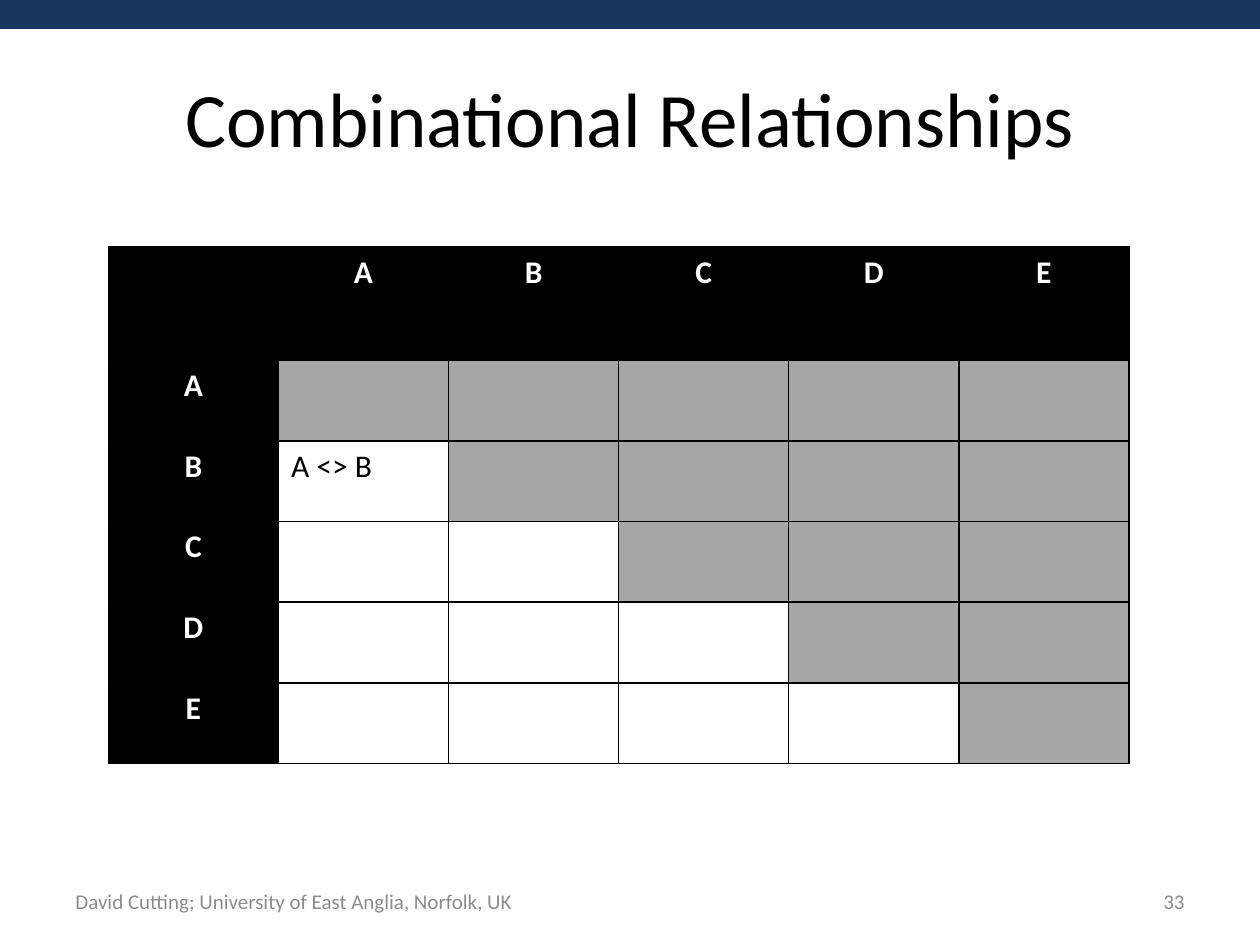
from lxml import etree
from pptx import Presentation
from pptx.dml.color import RGBColor
from pptx.enum import shapes, text
from pptx.oxml.ns import qn
from pptx.util import Inches, Pt

BLACK, WHITE, GREY, FOOTER_GREY = "000000", "FFFFFF", "A6A6A6", "8C8C8C"
LEFT, CENTER, RIGHT = text.PP_ALIGN.LEFT, text.PP_ALIGN.CENTER, text.PP_ALIGN.RIGHT


def write(frame, words, size=18, color=BLACK, bold=False, align=LEFT,
          anchor=text.MSO_ANCHOR.MIDDLE):
    frame.word_wrap = True
    frame.vertical_anchor = anchor
    paragraph = frame.paragraphs[0]
    paragraph.alignment = align
    run = paragraph.add_run()
    run.text = words
    run.font.name = "Calibri"
    run.font.size = Pt(size)
    run.font.bold = bold
    run.font.color.rgb = RGBColor.from_string(color)


def paint_cell(cell, color):
    """Give the cell black borders and a fill, or no fill if color is None."""
    properties = cell._tc.get_or_add_tcPr()
    for side in ("a:lnL", "a:lnR", "a:lnT", "a:lnB"):
        line = etree.SubElement(properties, qn(side), w=str(Pt(1)))
        fill = etree.SubElement(line, qn("a:solidFill"))
        etree.SubElement(fill, qn("a:srgbClr"), val=BLACK)
    if color:
        cell.fill.solid()
        cell.fill.fore_color.rgb = RGBColor.from_string(color)
    else:
        cell.fill.background()


presentation = Presentation()
presentation.slide_width, presentation.slide_height = Inches(10), Inches(7.5)
slide = presentation.slides.add_slide(presentation.slide_layouts[5])

# Top band
band = slide.shapes.add_shape(shapes.MSO_SHAPE.RECTANGLE, Inches(0), Inches(-0.01),
                              Inches(10), Inches(0.24))
band.shadow.inherit = False
band.fill.solid()
band.fill.fore_color.rgb = RGBColor.from_string("17375E")
band.line.fill.background()

# Title
title = slide.shapes.title
title.left, title.top = Inches(0.5), Inches(0.3)
title.width, title.height = Inches(9), Inches(1.25)
write(title.text_frame, "Combinational Relationships", size=44, align=CENTER)

# Relationship matrix: only the cells below the diagonal are open
names = "ABCDE"
count = len(names) + 1
table = slide.shapes.add_table(count, count, Inches(0.86), Inches(1.96),
                               Inches(8.11), Inches(4.08)).table
table.first_row = table.horz_banding = False
for column in table.columns:
    column.width = Inches(1.35)
for index, row in enumerate(table.rows):
    row.height = Inches(0.64 if index else 0.9)

for row in range(count):
    for column in range(count):
        cell = table.cell(row, column)
        if row == 0 or column == 0:
            paint_cell(cell, BLACK)
            if row != column:
                write(cell.text_frame, names[max(row, column) - 1], color=WHITE,
                      bold=True, align=CENTER, anchor=text.MSO_ANCHOR.TOP)
        else:
            paint_cell(cell, GREY if column >= row else None)
write(table.cell(2, 1).text_frame, "A <> B", anchor=text.MSO_ANCHOR.TOP)

# Footer and slide number
for words, left, width, align in [
    ("David Cutting; University of East Anglia, Norfolk, UK", 0.5, 6.08, LEFT),
    ("33", 7.17, 2.33, RIGHT),
]:
    box = slide.shapes.add_textbox(Inches(left), Inches(6.95), Inches(width), Inches(0.4))
    write(box.text_frame, words, size=12, color=FOOTER_GREY, align=align)

presentation.save("out.pptx")
